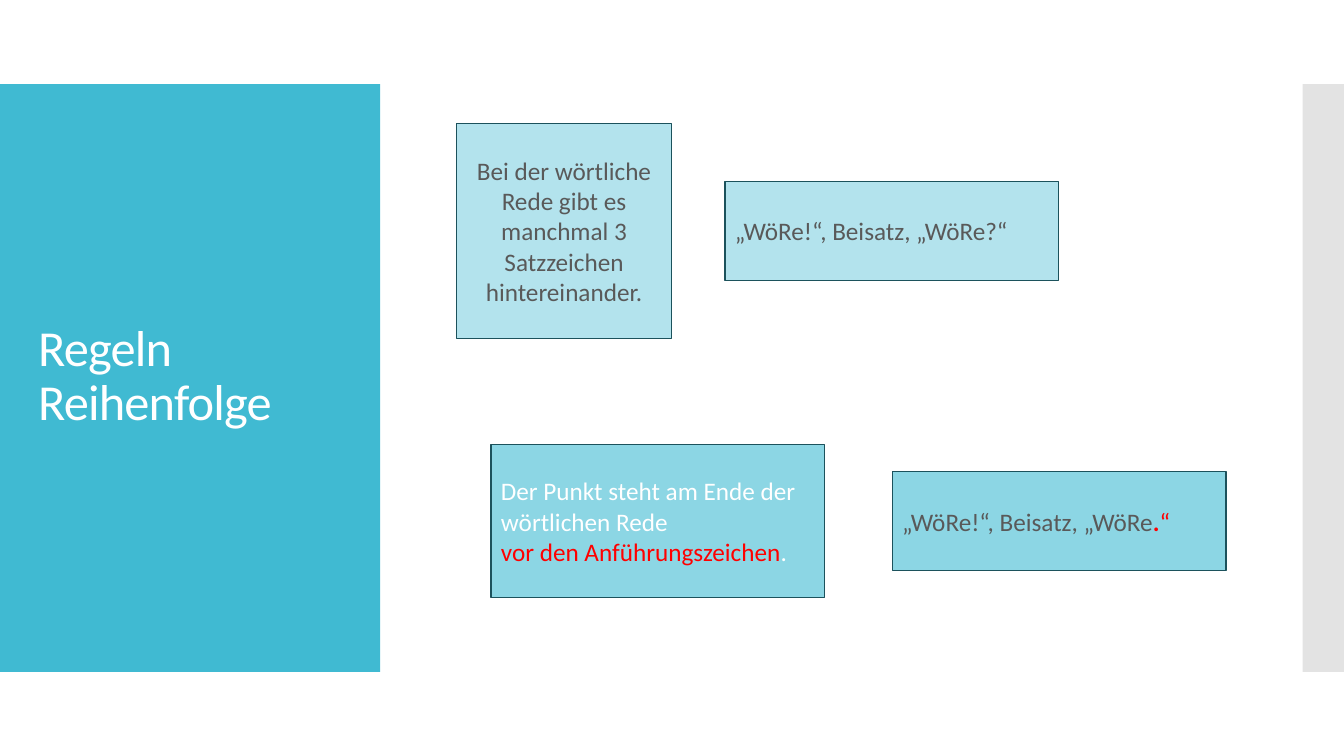
from dataclasses import dataclass

from lxml.etree import SubElement
from pptx import Presentation
from pptx.dml.color import RGBColor
from pptx.enum.shapes import MSO_SHAPE
from pptx.enum.text import MSO_ANCHOR, PP_ALIGN
from pptx.oxml.ns import qn
from pptx.util import Inches, Pt


@dataclass(frozen=True)
class Theme:
    font: str = "Calibri"
    title_size: int = 36
    body_size: int = 18
    outline_width: float = 0.85
    band: str = "40BAD2"
    edge: str = "C8C8C8"
    light: str = "B3E3ED"
    medium: str = "8CD6E4"
    outline: str = "1C525C"
    grey: str = "595959"
    white: str = "FFFFFF"
    red: str = "FF0000"


THEME = Theme()
WIDTH, HEIGHT = 13.33, 7.5
BAND_TOP, BAND_HEIGHT = HEIGHT / 9, HEIGHT * 7 / 9
UPPER_ROW, LOWER_ROW = 2.29, 5.17
CARD_WIDTH, CARD_HEIGHT = 3.31, 0.98


def color(value):
    return RGBColor.from_string(value)


def style(font, size, tint):
    font.name = THEME.font
    font.size = Pt(size)
    font.color.rgb = color(tint)


def add_rectangle(page, left, top, width, height, fill):
    box = page.shapes.add_shape(
        MSO_SHAPE.RECTANGLE, *map(Inches, (left, top, width, height)))
    box.shadow.inherit = False
    box.fill.solid()
    box.fill.fore_color.rgb = color(fill)
    box.line.fill.background()
    return box


def add_side_bands(page):
    add_rectangle(page, 0, BAND_TOP, 3.77, BAND_HEIGHT, THEME.band)
    edge = add_rectangle(page, 12.92, BAND_TOP, WIDTH - 12.92, BAND_HEIGHT, THEME.edge)
    tint = edge.fill._xPr.find(qn("a:solidFill"))[0]
    SubElement(tint, qn("a:alpha"), val="50000")


def add_title(page, text, left, top, width, height):
    box = page.shapes.add_textbox(*map(Inches, (left, top, width, height)))
    frame = box.text_frame
    frame.word_wrap = True
    frame.vertical_anchor = MSO_ANCHOR.MIDDLE
    para = frame.paragraphs[0]
    para.text = text
    para.line_spacing = 0.9
    style(para.font, THEME.title_size, THEME.white)
    for span in para.runs:
        span._r.get_or_add_rPr().set("spc", "-60")


def add_card(page, left, row, fill, paragraphs, width=CARD_WIDTH,
             height=CARD_HEIGHT, align=PP_ALIGN.LEFT):
    """Centre a card on its row; paragraphs hold (text, colour, bold) spans."""
    box = add_rectangle(page, left, row - height / 2, width, height, fill)
    box.line.color.rgb = color(THEME.outline)
    box.line.width = Pt(THEME.outline_width)
    frame = box.text_frame
    frame.word_wrap = True
    frame.vertical_anchor = MSO_ANCHOR.MIDDLE
    for index, spans in enumerate(paragraphs):
        para = frame.add_paragraph() if index else frame.paragraphs[0]
        para.alignment = align
        for text, tint, bold in spans:
            span = para.add_run()
            span.text = text
            style(span.font, THEME.body_size, tint)
            span.font.bold = bold


def add_rules(page):
    add_card(page, 4.53, UPPER_ROW, THEME.light,
             [[("Bei der wörtliche Rede gibt es manchmal 3 Satzzeichen "
                "hintereinander.", THEME.grey, False)]],
             width=2.13, height=2.13, align=PP_ALIGN.CENTER)
    add_card(page, 7.19, UPPER_ROW, THEME.light,
             [[("„WöRe!“, Beisatz, „WöRe?“", THEME.grey, False)]])
    add_card(page, 4.87, LOWER_ROW, THEME.medium,
             [[("Der Punkt steht am Ende der wörtlichen Rede", THEME.white, False)],
              [("vor den Anführungszeichen", THEME.red, False),
               (".", THEME.white, False)]],
             height=1.52)
    add_card(page, 8.85, LOWER_ROW, THEME.medium,
             [[("„WöRe!“, Beisatz, „WöRe", THEME.grey, False),
               (".", THEME.red, True), ("“", THEME.red, False)]])


def main():
    deck = Presentation()
    deck.slide_width, deck.slide_height = Inches(WIDTH), Inches(HEIGHT)
    page = deck.slides.add_slide(deck.slide_layouts[6])
    add_side_bands(page)
    add_title(page, "Regeln\vReihenfolge", 0.28, 1.23, 3.22, 5.03)
    add_rules(page)
    deck.save("out.pptx")


if __name__ == "__main__":
    main()
